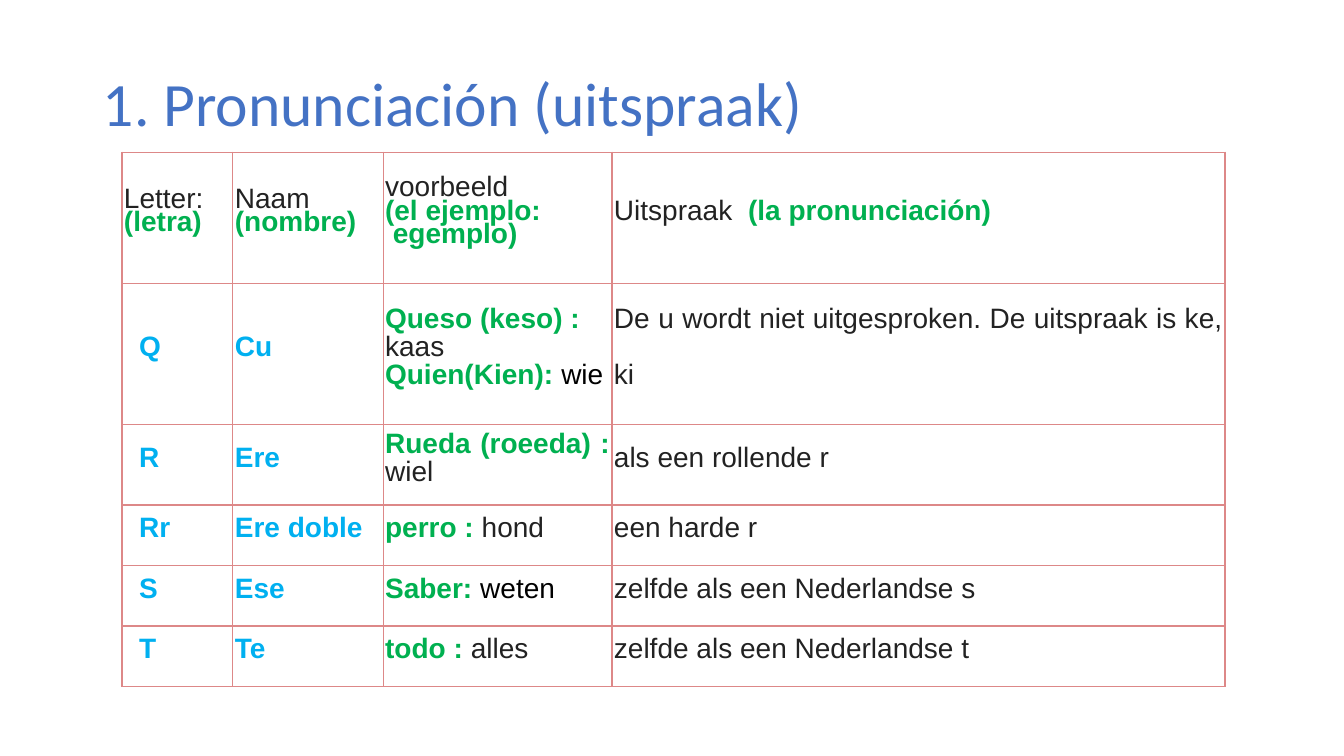
from dataclasses import dataclass

from lxml import etree
from pptx import Presentation
from pptx.dml.color import RGBColor
from pptx.enum import text
from pptx.oxml import ns
from pptx.util import Inches, Pt

HEADING = "1. Pronunciación (uitspraak)"

HEADER = [
    [[("Letter:", "dutch")], [("(letra)", "spanish")]],
    [[("Naam", "dutch")], [("(nombre)", "spanish")]],
    [[("voorbeeld", "dutch")], [("(el ejemplo:", "spanish")], [(" egemplo)", "spanish")]],
    [[("Uitspraak  ", "dutch"), ("(la pronunciación)", "spanish")]],
]

LETTERS = [
    ("Q", "Cu",
     [[("Queso (keso) : ", "spanish")], [("kaas", "dutch")],
      [("Quien(Kien): ", "spanish"), ("wie", "black")]],
     ["De u wordt niet uitgesproken. De uitspraak is ke, ", "ki "]),
    ("R", "Ere",
     [[("Rueda (roeeda) : ", "spanish")], [("wiel", "dutch")]],
     ["als een rollende r "]),
    ("Rr", "Ere doble",
     [[("perro :", "spanish"), (" hond", "dutch")]],
     ["een harde r "]),
    ("S", "Ese",
     [[("Saber: ", "spanish"), ("weten", "black")]],
     ["zelfde als een Nederlandse s"]),
    ("T", "Te",
     [[("todo :", "spanish"), (" alles", "dutch")]],
     ["zelfde als een Nederlandse t "]),
]

COLUMN_WIDTHS = [1.1, 1.49, 2.27, 6.08]
ROW_HEIGHTS = [1.3, 1.4, 0.8, 0.6, 0.6, 0.6]


@dataclass(frozen=True)
class Theme:
    heading: str = "4472C4"
    dutch: str = "222222"
    spanish: str = "00B050"
    letter: str = "00B0F0"
    black: str = "000000"
    border: str = "DD8888"
    heading_font: str = "Calibri"
    table_font: str = "Arial"
    heading_size: int = 44
    table_size: int = 20
    line: int = 12
    header_gap: float = 2.4
    body_gap: int = 8


THEME = Theme()


def style_run(run, font, size, color, bold=False):
    run.font.name = font
    run.font.size = Pt(size)
    run.font.bold = bold
    run.font.color.rgb = RGBColor.from_string(color)


def add_borders(cell):
    properties = cell._tc.get_or_add_tcPr()
    for position, side in enumerate(("lnL", "lnR", "lnT", "lnB")):
        border = etree.Element(ns.qn(f"a:{side}"), w=str(Pt(1)))
        fill = etree.SubElement(border, ns.qn("a:solidFill"))
        etree.SubElement(fill, ns.qn("a:srgbClr"), val=THEME.border)
        properties.insert(position, border)


def fill_cell(cell, lines, is_header, indent, line_gap):
    cell.fill.background()
    add_borders(cell)
    cell.vertical_anchor = text.MSO_ANCHOR.MIDDLE
    cell.margin_right = cell.margin_top = cell.margin_bottom = Inches(0.02)
    cell.margin_left = Inches(0.02 + indent)
    for index, spans in enumerate(lines):
        frame = cell.text_frame
        paragraph = frame.add_paragraph() if index else frame.paragraphs[0]
        paragraph.line_spacing = Pt(THEME.line)
        if is_header:
            paragraph.space_before = paragraph.space_after = Pt(THEME.header_gap)
        else:
            paragraph.alignment = text.PP_ALIGN.JUSTIFY
            paragraph.space_before = Pt(line_gap if index else 0)
            paragraph.space_after = Pt(THEME.body_gap)
        for words, style in spans:
            run = paragraph.add_run()
            run.text = words
            style_run(run, THEME.table_font, THEME.table_size,
                      getattr(THEME, style), style in ("spanish", "letter"))


def add_heading(slide):
    heading = slide.shapes.title
    heading.left, heading.top = Inches(0.92), Inches(0.33)
    heading.width, heading.height = Inches(11.5), Inches(1.45)
    heading.text_frame.text = HEADING
    heading.text_frame.vertical_anchor = text.MSO_ANCHOR.MIDDLE
    line = heading.text_frame.paragraphs[0]
    line.alignment = text.PP_ALIGN.LEFT
    line.line_spacing = 0.9
    style_run(line.runs[0], THEME.heading_font, THEME.heading_size, THEME.heading)


def add_pronunciation(slide):
    rows = [HEADER] + [
        [[[(letter, "letter")]], [[(name, "letter")]], examples,
         [[(sound, "dutch")] for sound in sounds]]
        for letter, name, examples, sounds in LETTERS
    ]
    table = slide.shapes.add_table(
        len(rows), len(COLUMN_WIDTHS), Inches(1.21), Inches(1.51),
        Inches(sum(COLUMN_WIDTHS)), Inches(sum(ROW_HEIGHTS))).table
    table.first_row = table.horz_banding = False
    for column, width in zip(table.columns, COLUMN_WIDTHS):
        column.width = Inches(width)
    for row, height in zip(table.rows, ROW_HEIGHTS):
        row.height = Inches(height)
    for r, row in enumerate(rows):
        for c, lines in enumerate(row):
            indent = 0.15 if r and c == 0 else 0
            line_gap = THEME.line + THEME.body_gap if c == 3 else 0
            fill_cell(table.cell(r, c), lines, r == 0, indent, line_gap)


def main():
    deck = Presentation()
    deck.slide_width, deck.slide_height = Inches(13.33), Inches(7.5)
    slide = deck.slides.add_slide(deck.slide_layouts[5])
    add_heading(slide)
    add_pronunciation(slide)
    deck.save("out.pptx")


if __name__ == "__main__":
    main()
